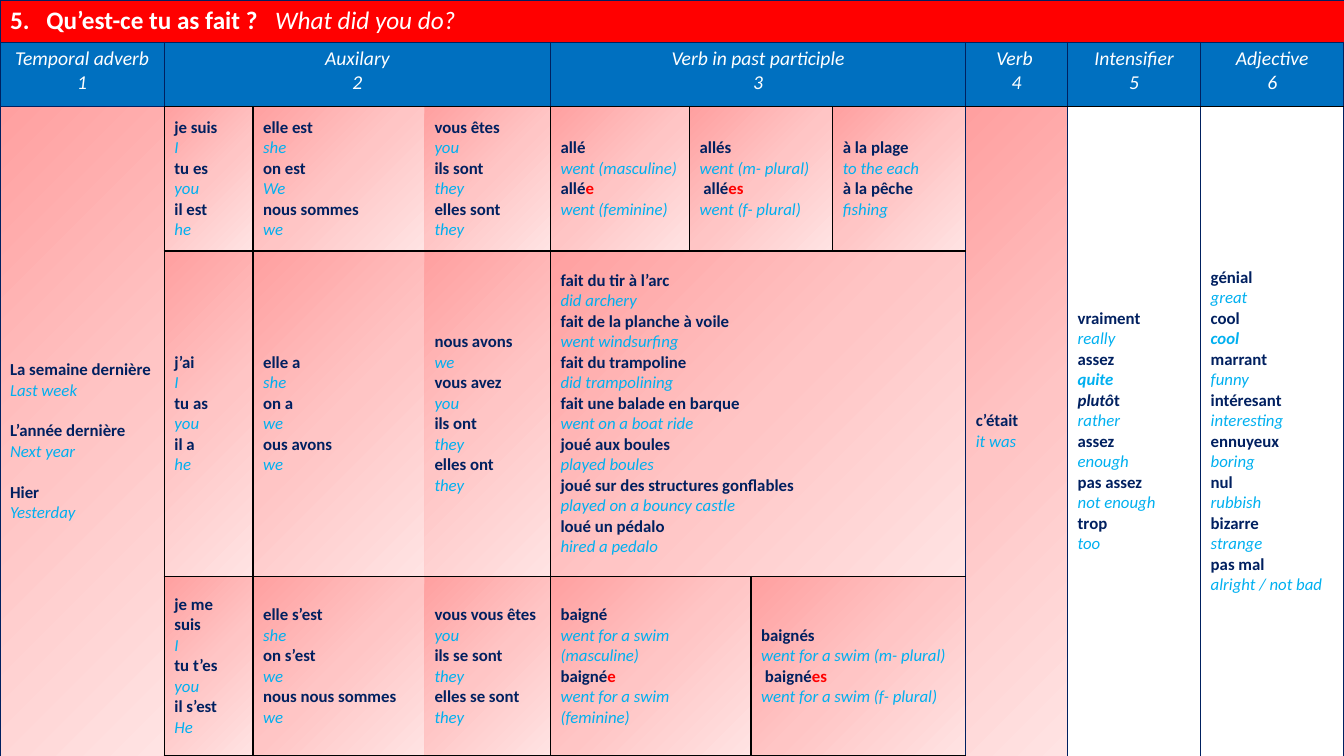
from lxml import etree
from pptx import Presentation
from pptx.dml.color import RGBColor
from pptx.enum.text import MSO_ANCHOR as Anchor, PP_ALIGN as Align
from pptx.oxml import parse_xml
from pptx.oxml.ns import nsdecls, qn
from pptx.util import Inches, Pt

COLORS = {"navy": "002060", "black": "000000", "white": "FFFFFF", "red": "FF0000",
          "blue": "0070C0", "sky": "00B0F0",
          "blush_dark": "FFA0A0", "blush": "FFC5C5", "blush_light": "FFE3E3"}
COLUMNS = [1.63, 0.88, 1.7, 1.25, 1.38, 0.61, 0.81, 1.32, 1.01, 1.32, 1.42]
ROWS = [0.42, 0.64, 1.43, 3.23, 1.78]
PLAIN_STYLE = "{2D5ABB26-0587-4C30-8999-92F81FD0307C}"
STYLES = {"f": dict(color="navy", bold=True), "e": dict(color="sky", italic=True),
          "F": dict(color="navy", bold=True, italic=True),
          "E": dict(color="sky", bold=True, italic=True),
          "r": dict(color="red", bold=True)}
HEADERS = [(0, 1, "Temporal adverb"), (1, 3, "Auxilary"), (4, 4, "Verb in past participle"),
           (8, 1, "Verb "), (9, 1, "Intensifier"), (10, 1, "Adjective")]
AUXILIARIES = [
    ["je suis|I|tu es|you|il est|he",
     "elle est|she|on est|We|nous sommes|we",
     "vous êtes|you|ils sont|they|elles sont|they"],
    ["j’ai|I|tu as|you|il a|he",
     "elle a|she|on a|we|ous avons|we",
     "nous avons|we|vous avez|you|ils ont|they|elles ont|they"],
    ["je me suis|I|tu t’es|you|il s’est|He",
     "elle s’est|she|on s’est|we|nous nous sommes|we",
     "vous vous êtes|you|ils se sont|they|elles se sont|they"]]
PARTICIPLES = [
    (2, 4, 1, "ltb", "allé|went (masculine)|allé#re|went (feminine)"),
    (2, 5, 2, "trb", "allés|went (m- plural)| allé#res|went (f- plural)"),
    (2, 7, 1, "ltRb", "à la plage|to the each|à la pêche|fishing"),
    (3, 4, 4, "ltRb", "fait du tir à l’arc|did archery|fait de la planche à voile|"
     "went windsurfing|fait du trampoline|did trampolining|fait une balade en barque|"
     "went on a boat ride|joué aux boules|played boules|joué sur des structures gonflables|"
     "played on a bouncy castle|loué un pédalo|hired a pedalo"),
    (4, 4, 2, "ltb", "baigné|went for a swim (masculine)|baigné#re|went for a swim (feminine)"),
    (4, 6, 2, "trb",
     "baignés|went for a swim (m- plural)| baigné#res|went for a swim (f- plural)")]
TIMES = "La semaine dernière|Last week|L’année dernière|Next year|Hier|Yesterday"
OPINIONS = [
    (8, "blush", "c’était|it was"),
    (9, None, "vraiment|really|assez|#Equite|#Fplutô#ft|rather|assez|enough|"
     "pas assez|not enough|trop|too"),
    (10, None, "génial|great|cool|#Ecool|marrant|funny|intéresant|interesting|ennuyeux|boring|"
     "nul|rubbish|bizarre|strange|pas mal|alright / not bad")]


def add_text(paragraph, text, size=12, color="navy", bold=False, italic=False):
    """Append one formatted run to a paragraph."""
    run = paragraph.add_run()
    run.text = text
    run.font.name, run.font.size = "Calibri", Pt(size)
    run.font.bold, run.font.italic = bold, italic
    run.font.color.rgb = RGBColor.from_string(COLORS[color])


def add_borders(cell, sides):
    """Draw the named sides: lower case in black, upper case in navy."""
    properties = cell._tc.get_or_add_tcPr()
    for side in "LRTB":
        if side in sides.upper():
            color = COLORS["navy" if side in sides else "black"]
            properties.append(parse_xml(
                f'<a:ln{side} {nsdecls("a")} w="12700"><a:solidFill>'
                f'<a:srgbClr val="{color}"/></a:solidFill></a:ln{side}>'))


def fill_cell(cell, fill):
    """Give a cell the blush gradient, a flat colour or no fill."""
    if fill is None:
        cell.fill.background()
    elif fill != "blush":
        cell.fill.solid()
        cell.fill.fore_color.rgb = RGBColor.from_string(COLORS[fill])
    else:
        stops = "".join(
            f'<a:gs pos="{position}"><a:srgbClr val="{COLORS[name]}"/></a:gs>' for position, name
            in ((0, "blush_dark"), (50000, "blush"), (100000, "blush_light")))
        cell._tc.get_or_add_tcPr().append(parse_xml(
            f'<a:gradFill {nsdecls("a")} rotWithShape="1"><a:gsLst>{stops}</a:gsLst>'
            '<a:lin ang="2700000" scaled="1"/></a:gradFill>'))


def place_cell(table, row, column, height, width, sides, fill):
    """Merge a block of the grid, border its outer edges and return its first cell."""
    for i in range(height):
        for j in range(width):
            hidden = ("T" * (i > 0) + "B" * (i < height - 1)
                      + "L" * (j > 0) + "R" * (j < width - 1))
            cell = table.cell(row + i, column + j)
            add_borders(cell, "".join(s for s in sides if s.upper() not in hidden))
            fill_cell(cell, fill)
    first = table.cell(row, column)
    if height * width > 1:
        first.merge(table.cell(row + height - 1, column + width - 1))
    return first


def add_vocabulary(cell, text, gap=0):
    """Write French lines with English below, with a gap between the pairs."""
    cell.vertical_anchor = Anchor.MIDDLE
    frame = cell.text_frame
    for index, line in enumerate(text.split("|")):
        paragraph = frame.add_paragraph() if index else frame.paragraphs[0]
        if gap and index and index % 2 == 0:
            paragraph.space_before = Pt(gap)
        plain, *marked = line.split("#")
        if plain:
            add_text(paragraph, plain, **STYLES["fe"[index % 2]])
        for piece in marked:
            add_text(paragraph, piece[1:], **STYLES[piece[0]])


def build_title(table):
    """Fill the red title row, spaced with two tab stops."""
    cell = place_cell(table, 0, 0, 1, len(COLUMNS), "LTRB", "red")
    paragraph = cell.text_frame.paragraphs[0]
    add_text(paragraph, "5.\tQu’est-ce tu as fait ?\t", size=18, color="white", bold=True)
    add_text(paragraph, "What did you do?", size=18, color="white", italic=True)
    tabs = etree.SubElement(paragraph._p.get_or_add_pPr(), qn("a:tabLst"))
    for position in (0.36, 2.63):
        etree.SubElement(tabs, qn("a:tab"), pos=str(Inches(position)), algn="l")


def build_headers(table):
    """Fill the blue row of numbered column headings."""
    for number, (column, width, heading) in enumerate(HEADERS, 1):
        frame = place_cell(table, 1, column, 1, width, "LTRB", "blue").text_frame
        for paragraph, text in ((frame.paragraphs[0], heading),
                                (frame.add_paragraph(), str(number))):
            paragraph.alignment = Align.CENTER
            add_text(paragraph, text, size=14, color="white", italic=True)


def build_times(table):
    """Fill the tall column of temporal adverbs."""
    cell = place_cell(table, 2, 0, 3, 1, "LTrB", "blush")
    cell.margin_top = Inches(0.25)
    add_vocabulary(cell, TIMES, gap=14.6)


def build_verbs(table):
    """Fill the auxiliaries and the past participles."""
    for row, texts in enumerate(AUXILIARIES, 2):
        for column, (sides, text) in enumerate(zip(("ltb", "tb", "trb"), texts), 1):
            add_vocabulary(place_cell(table, row, column, 1, 1, sides, "blush"), text)
    for row, column, width, sides, text in PARTICIPLES:
        add_vocabulary(place_cell(table, row, column, 1, width, sides, "blush"), text)


def build_opinions(table):
    """Fill the tall verb, intensifier and adjective columns."""
    for column, fill, text in OPINIONS:
        add_vocabulary(place_cell(table, 2, column, 3, 1, "LtRb", fill), text)


def add_grid(slide, left, top, width, height):
    """Add the unstyled table with its columns and rows shared out over the box."""
    table = slide.shapes.add_table(len(ROWS), len(COLUMNS), left, top, width, height).table
    table.first_row = table.horz_banding = False
    table._tbl.tblPr.find(qn("a:tableStyleId")).text = PLAIN_STYLE
    for column, share in zip(table.columns, COLUMNS):
        column.width = int(width * share / sum(COLUMNS))
    for row, share in zip(table.rows, ROWS):
        row.height = int(height * share / sum(ROWS))
    return table


def main():
    """Build the sentence-builder slide and save it."""
    presentation = Presentation()
    presentation.slide_width, presentation.slide_height = Inches(13.33), Inches(7.5)
    slide = presentation.slides.add_slide(presentation.slide_layouts[6])
    table = add_grid(slide, 0, 0, presentation.slide_width, presentation.slide_height)
    for build in (build_title, build_headers, build_times, build_verbs, build_opinions):
        build(table)
    presentation.save("out.pptx")


if __name__ == "__main__":
    main()
